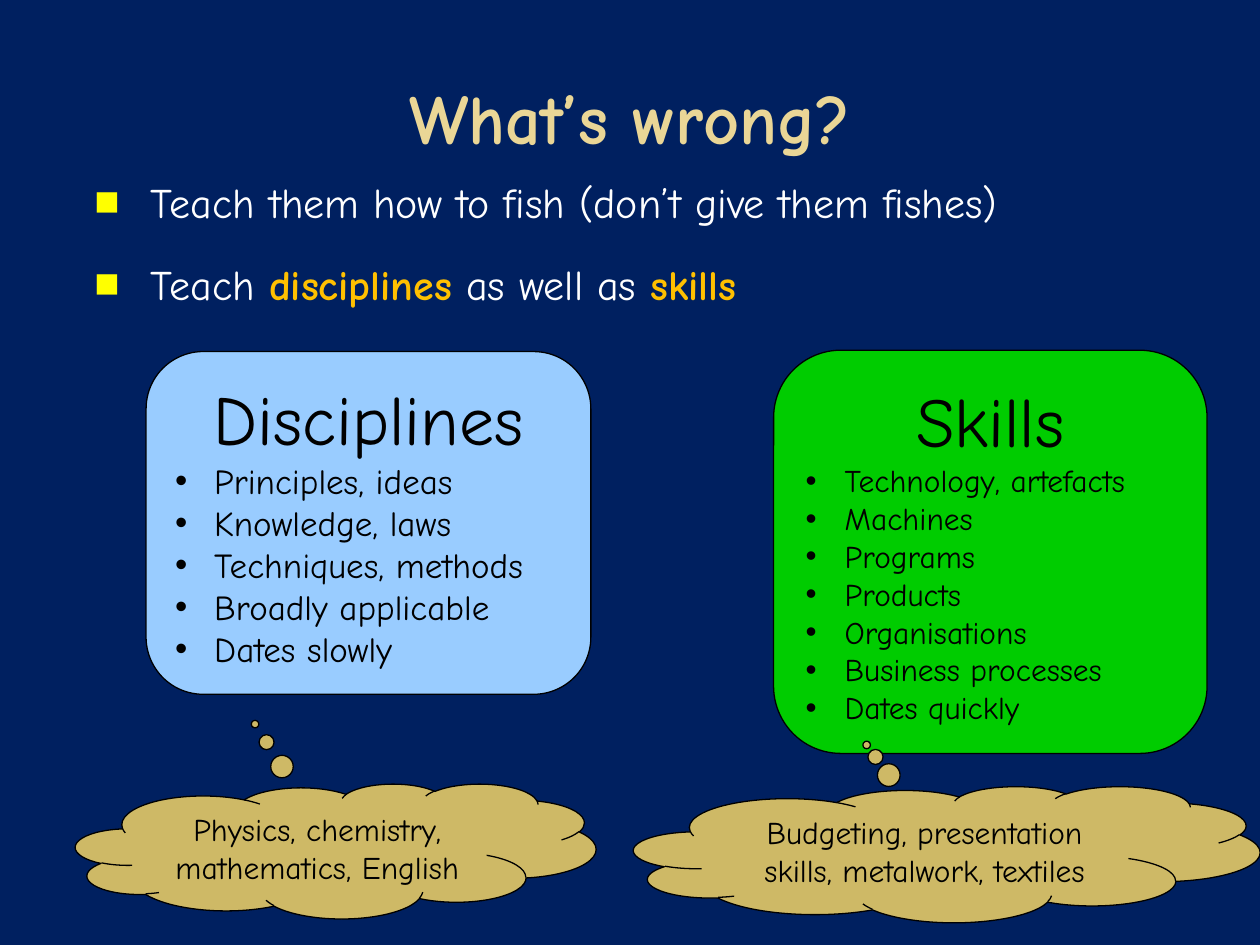
"""Build a slide contrasting disciplines with skills."""
from pptx import Presentation
from pptx.dml.color import RGBColor
from pptx.enum.shapes import MSO_SHAPE as Shape
from pptx.enum.text import MSO_ANCHOR as Anchor, MSO_AUTO_SIZE as AutoSize, PP_ALIGN as Align
from pptx.oxml.ns import qn
from pptx.util import Inches, Pt
from lxml.etree import SubElement

FONT = "Comic Neue"
NAVY = RGBColor(0x00, 0x20, 0x60)
CREAM = RGBColor(0xEA, 0xD6, 0x96)
WHITE = RGBColor(0xFF, 0xFF, 0xFF)
BLACK = RGBColor(0x00, 0x00, 0x00)
YELLOW = RGBColor(0xFF, 0xFF, 0x00)
ORANGE = RGBColor(0xFF, 0xC0, 0x00)
BLUE = RGBColor(0x99, 0xCC, 0xFF)
GREEN = RGBColor(0x00, 0xCC, 0x00)
SAND = RGBColor(0xCE, 0xB9, 0x66)

MESSAGES = [
    [("Teach them how to fish (don’t give them fishes)", False)],
    [("Teach ", False), ("disciplines", True), (" as well as ", False), ("skills", True)],
]
PANELS = [
    ((1.16, 2.79, 3.53, 2.72), BLUE, "Disciplines", 20,
     ["Principles, ideas", "Knowledge, laws", "Techniques, methods",
      "Broadly applicable", "Dates slowly"]),
    ((6.14, 2.78, 3.44, 3.2), GREEN, "Skills", 18,
     ["Technology, artefacts", "Machines", "Programs", "Products",
      "Organisations", "Business processes", "Dates quickly"]),
]
CLOUDS = [
    ((0.6, 6.22, 4.13, 1.07), (-0.155, -0.942), "Physics, chemistry, mathematics, English"),
    ((5.03, 6.24, 4.97, 1.08), (-0.128, -0.804),
     "Budgeting, presentation skills, metalwork, textiles"),
]


def format_runs(paragraph, size, color, bold=False):
    """Apply one font style to every run of a paragraph."""
    for run in paragraph.runs:
        run.font.name = FONT
        run.font.size = Pt(size)
        run.font.bold = bold
        run.font.color.rgb = color


def set_bullet(paragraph, character, indent, hanging, color=None):
    """Give a paragraph a bullet with a hanging indent."""
    properties = paragraph._p.get_or_add_pPr()
    properties.set("marL", str(Inches(indent)))
    properties.set("indent", str(-Inches(hanging)))
    if color is not None:
        bullet_color = SubElement(properties, qn("a:buClr"))
        SubElement(bullet_color, qn("a:srgbClr"), val=str(color))
    SubElement(properties, qn("a:buFont"), typeface="Arial")
    SubElement(properties, qn("a:buChar"), char=character)


def add_text_box(slide, box):
    """Add a wrapping text box and return its text frame."""
    text_frame = slide.shapes.add_textbox(*map(Inches, box)).text_frame
    text_frame.word_wrap = True
    return text_frame


def add_title(slide, text):
    """Add the centred slide title."""
    text_frame = add_text_box(slide, (0.5, 0.3, 9, 1.25))
    text_frame.vertical_anchor = Anchor.MIDDLE
    text_frame.text = text
    paragraph = text_frame.paragraphs[0]
    paragraph.alignment = Align.CENTER
    format_runs(paragraph, 40, CREAM, bold=True)


def add_messages(slide, messages):
    """Add the main bullets with their highlighted words."""
    text_frame = add_text_box(slide, (0.5, 1.35, 9, 5.15))
    text_frame.text = "\n".join("" for _ in messages)
    for paragraph, pieces in zip(text_frame.paragraphs, messages):
        paragraph.space_before = Pt(18)
        set_bullet(paragraph, "■", 0.6, 0.45, YELLOW)
        for text, _ in pieces:
            paragraph.add_run().text = text
        format_runs(paragraph, 24, WHITE)
        for run, (_, highlighted) in zip(paragraph.runs, pieces):
            if highlighted:
                run.font.bold = True
                run.font.color.rgb = ORANGE


def add_filled_shape(slide, kind, box, fill, text):
    """Add an outlined shape holding text and return it."""
    shape = slide.shapes.add_shape(kind, *map(Inches, box))
    shape.shadow.inherit = False
    shape.fill.solid()
    shape.fill.fore_color.rgb = fill
    shape.line.color.rgb = BLACK
    shape.line.width = Pt(0.75)
    text_frame = shape.text_frame
    text_frame.word_wrap = True
    text_frame.auto_size = AutoSize.SHAPE_TO_FIT_TEXT
    text_frame.vertical_anchor = Anchor.MIDDLE
    text_frame.text = text
    return shape


def add_panel(slide, box, fill, heading, size, items):
    """Add a rounded panel with a heading and a bullet list."""
    text = "\n".join([heading, *items])
    panel = add_filled_shape(slide, Shape.ROUNDED_RECTANGLE, box, fill, text)
    heading_paragraph, *item_paragraphs = panel.text_frame.paragraphs
    heading_paragraph.alignment = Align.CENTER
    format_runs(heading_paragraph, 40, BLACK)
    for paragraph in item_paragraphs:
        paragraph.alignment = Align.LEFT
        set_bullet(paragraph, "•", 0.31, 0.31)
        format_runs(paragraph, size, BLACK)


def add_cloud(slide, box, pointer, text):
    """Add a thought cloud whose bubbles lead to a panel."""
    cloud = add_filled_shape(slide, Shape.CLOUD_CALLOUT, box, SAND, text)
    for index, value in enumerate(pointer):
        cloud.adjustments[index] = value
    paragraph = cloud.text_frame.paragraphs[0]
    paragraph.alignment = Align.CENTER
    format_runs(paragraph, 18, BLACK)


def main():
    """Build and save the slide."""
    presentation = Presentation()
    presentation.slide_width = Inches(10)
    presentation.slide_height = Inches(7.5)
    slide = presentation.slides.add_slide(presentation.slide_layouts[6])
    slide.background.fill.solid()
    slide.background.fill.fore_color.rgb = NAVY
    add_title(slide, "What’s wrong?")
    add_messages(slide, MESSAGES)
    for panel in PANELS:
        add_panel(slide, *panel)
    for cloud in CLOUDS:
        add_cloud(slide, *cloud)
    presentation.save("out.pptx")


if __name__ == "__main__":
    main()
